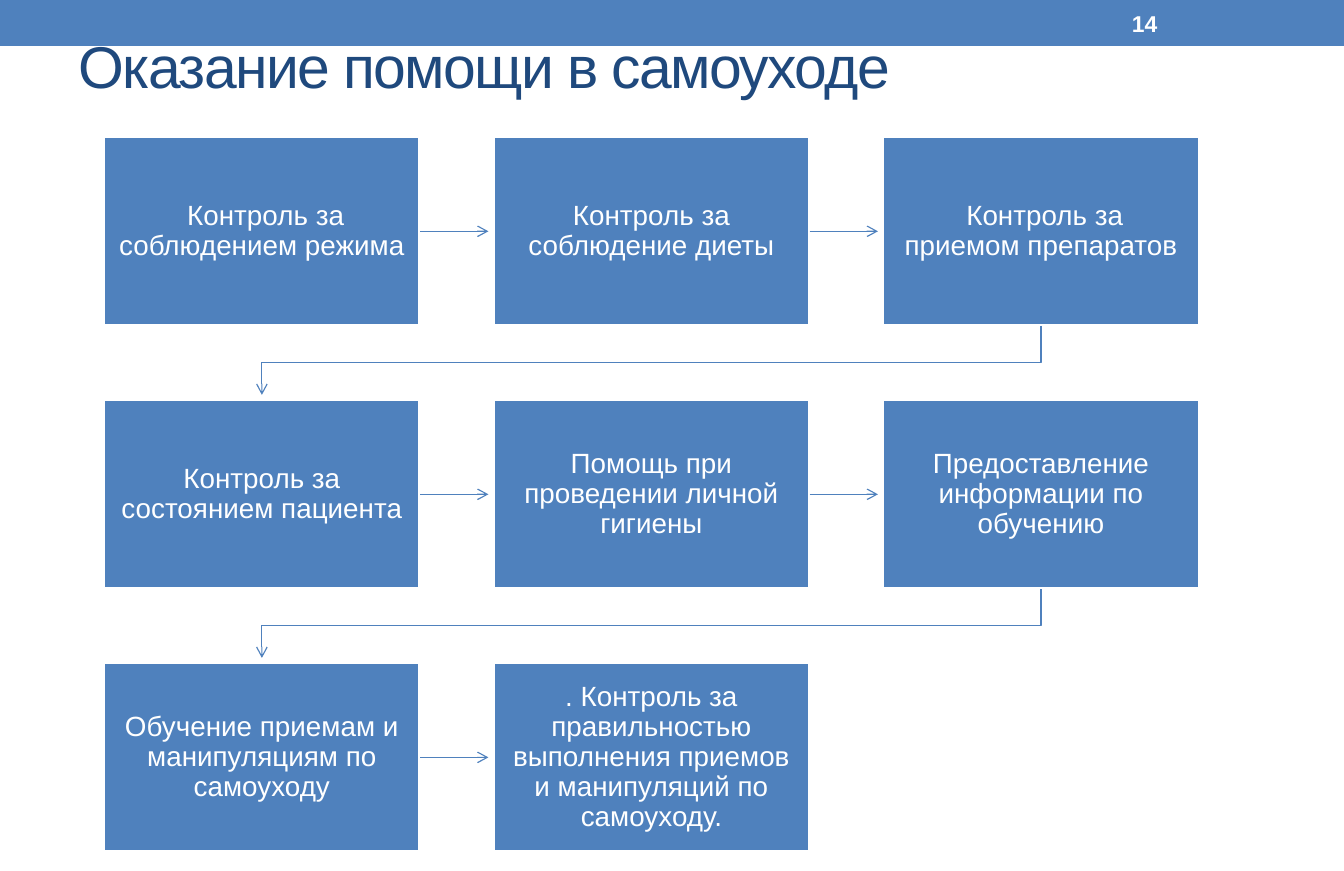
from dataclasses import dataclass

from lxml import etree
from pptx import Presentation
from pptx.dml.color import RGBColor
from pptx.enum import shapes, text
from pptx.oxml import ns
from pptx.util import Inches, Pt


@dataclass(frozen=True)
class Theme:
    font: str = "Arial"
    accent: RGBColor = RGBColor(0x4F, 0x81, 0xBD)
    heading: RGBColor = RGBColor(0x1F, 0x49, 0x7D)
    light: RGBColor = RGBColor(0xFF, 0xFF, 0xFF)
    title_size: int = 36
    number_size: int = 14
    step_size: int = 17


THEME = Theme()
SLIDE_WIDTH, SLIDE_HEIGHT = 11.42, 7.4
COLUMNS = 3
STEP_WIDTH, STEP_HEIGHT = 2.69, 1.61
COLUMN_PITCH, ROW_PITCH = 3.31, 2.235
ARROW_GAP = 0.04
STEPS = [
    " Контроль за соблюдением режима",
    "Контроль за соблюдение диеты",
    " Контроль за приемом препаратов",
    "Контроль за состоянием пациента",
    "Помощь при проведении личной гигиены",
    "Предоставление информации по обучению",
    "Обучение приемам и манипуляциям по самоуходу",
    ". Контроль за правильностью выполнения приемов и манипуляций по самоуходу.",
]


def write_text(shape, content, size, color, bold=False, align=text.PP_ALIGN.LEFT,
               anchor=text.MSO_ANCHOR.MIDDLE, line_spacing=None, inset=None,
               tracking=None):
    frame = shape.text_frame
    frame.word_wrap = True
    frame.auto_size = text.MSO_AUTO_SIZE.NONE
    frame.vertical_anchor = anchor
    if inset is not None:
        frame.margin_left = frame.margin_right = Inches(inset)
        frame.margin_top = frame.margin_bottom = Inches(inset)
    paragraph = frame.paragraphs[0]
    paragraph.alignment = align
    if line_spacing is not None:
        paragraph.line_spacing = line_spacing
    run = paragraph.add_run()
    run.text = content
    run.font.name = THEME.font
    run.font.size = Pt(size)
    run.font.bold = bold
    run.font.color.rgb = color
    if tracking is not None:
        run.font._element.set("spc", str(tracking * 100))


def add_rectangle(slide, left, top, width, height):
    shape = slide.shapes.add_shape(
        shapes.MSO_SHAPE.RECTANGLE,
        Inches(left), Inches(top), Inches(width), Inches(height))
    shape.shadow.inherit = False
    shape.fill.solid()
    shape.fill.fore_color.rgb = THEME.accent
    shape.line.fill.background()
    return shape


def style_arrow(arrow):
    arrow.line.color.rgb = THEME.accent
    arrow.line.width = Pt(0.75)
    line = arrow.line._get_or_add_ln()
    etree.SubElement(line, ns.qn("a:tailEnd"), type="arrow")
    properties = arrow._element.spPr
    if properties.find(ns.qn("a:effectLst")) is None:
        etree.SubElement(properties, ns.qn("a:effectLst"))


def add_header(slide, left, top, width):
    add_rectangle(slide, left, top, width, 0.39)
    number = slide.shapes.add_textbox(
        Inches(left + 9.52), Inches(top + 0.02), Inches(1.33), Inches(0.36))
    write_text(number, "14", THEME.number_size, THEME.light, bold=True)


def add_title(slide, left, top, width, height):
    title = slide.shapes.title
    title.left, title.top = Inches(left), Inches(top)
    title.width, title.height = Inches(width), Inches(height)
    write_text(title, "Оказание помощи в самоуходе", THEME.title_size,
               THEME.heading, anchor=text.MSO_ANCHOR.TOP, tracking=-1)


def add_step(slide, left, top, content):
    step = add_rectangle(slide, left, top, STEP_WIDTH, STEP_HEIGHT)
    step.line.color.rgb = THEME.light
    step.line.width = Pt(2)
    write_text(step, content, THEME.step_size, THEME.light,
               align=text.PP_ALIGN.CENTER, line_spacing=0.9, inset=0.13)
    return step


def add_arrow_right(slide, step, left, top):
    """Point from a step to the next one in its row."""
    middle = Inches(top + STEP_HEIGHT / 2)
    arrow = slide.shapes.add_connector(
        shapes.MSO_CONNECTOR.STRAIGHT, Inches(left + STEP_WIDTH), middle,
        Inches(left + COLUMN_PITCH - ARROW_GAP), middle)
    arrow.begin_connect(step, 3)
    style_arrow(arrow)


def add_arrow_to_next_row(slide, left, top):
    """Lead from the last step of a row to the first step of the next."""
    end_x = left + STEP_WIDTH / 2
    start_x = end_x + (COLUMNS - 1) * COLUMN_PITCH
    start_y = top + STEP_HEIGHT
    turn_y = top + (STEP_HEIGHT + ROW_PITCH) / 2
    end_y = top + ROW_PITCH - ARROW_GAP
    builder = slide.shapes.build_freeform(
        Inches(start_x), Inches(start_y), scale=1.0)
    builder.add_line_segments(
        [(Inches(x), Inches(y)) for x, y in
         [(start_x, turn_y), (end_x, turn_y), (end_x, end_y)]], close=False)
    arrow = builder.convert_to_shape()
    arrow.fill.background()
    style_arrow(arrow)


def add_process(slide, left, top):
    for index, content in enumerate(STEPS):
        row, column = divmod(index, COLUMNS)
        step_left = left + column * COLUMN_PITCH
        step_top = top + row * ROW_PITCH
        step = add_step(slide, step_left, step_top, content)
        if index == len(STEPS) - 1:
            continue
        if column < COLUMNS - 1:
            add_arrow_right(slide, step, step_left, step_top)
        else:
            add_arrow_to_next_row(slide, left, step_top)


def main():
    presentation = Presentation()
    presentation.slide_width = Inches(SLIDE_WIDTH)
    presentation.slide_height = Inches(SLIDE_HEIGHT)
    slide = presentation.slides.add_slide(presentation.slide_layouts[5])
    add_header(slide, 0, 0, SLIDE_WIDTH)
    add_title(slide, 0.57, 0.2, 10.28, 1.45)
    add_process(slide, 0.88, 1.16)
    presentation.save("out.pptx")


if __name__ == "__main__":
    main()
